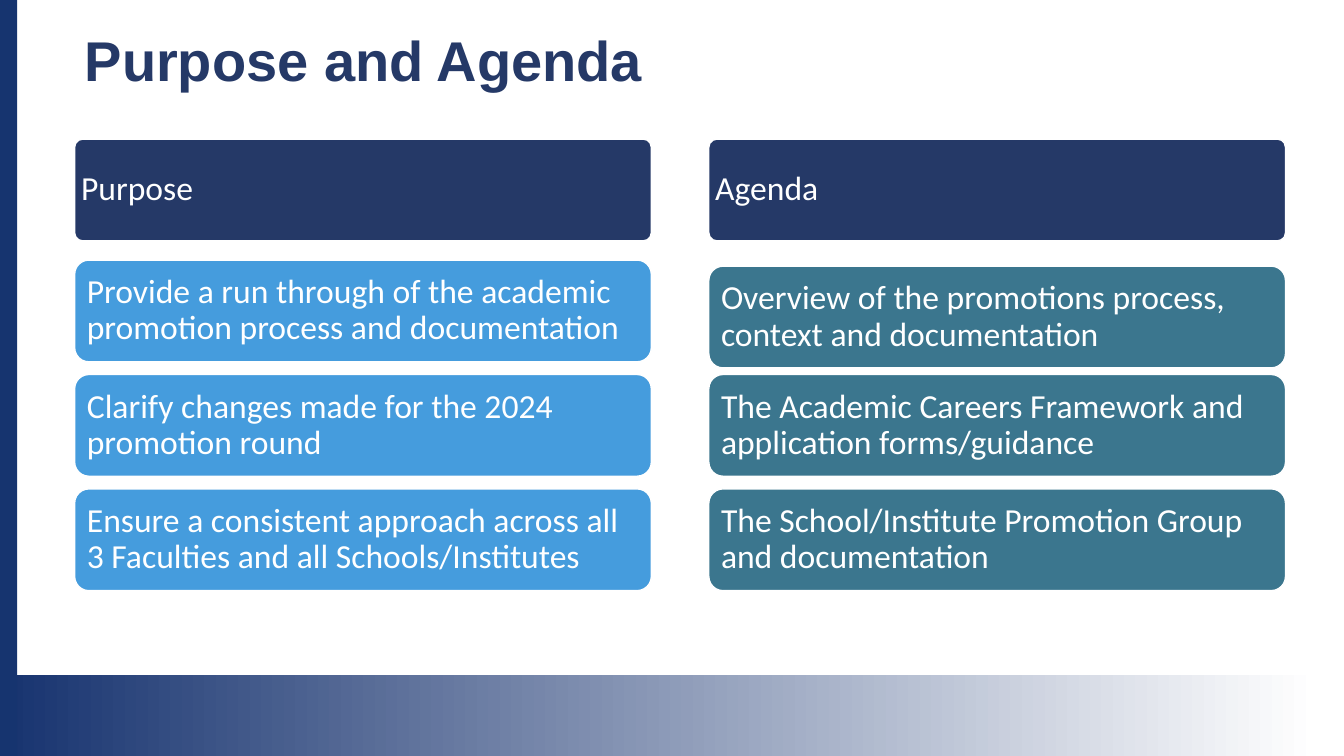
from dataclasses import dataclass

from pptx import Presentation
from pptx import util as u
from pptx.dml.color import RGBColor
from pptx.enum import shapes, text


@dataclass(frozen=True)
class Theme:
    navy: str = "253967"
    band: str = "17336F"
    bar: str = "16346F"
    blue: str = "459CDD"
    teal: str = "3B768E"
    white: str = "FFFFFF"
    head: str = "Arial"
    body: str = "Calibri"
    big: int = 40
    size: int = 24


THEME = Theme()
WIDE, HIGH = 13.33, 7.5

# Grid of two columns: a header row, then three rows of cards
LEFT, STEP, CARD_W, CARD_H = 0.74, 6.29, 5.72, 1.01
HEAD_Y, ROW_Y, PITCH = 1.38, 2.58, 1.135

# Heading, card colour, drop of the first card, card texts
COLUMNS = [
    ("Purpose", THEME.blue, 0, [
        "Provide a run through of the academic promotion process and documentation",
        "Clarify changes made for the 2024 promotion round",
        "Ensure a consistent approach across all 3 Faculties and all Schools/Institutes",
    ]),
    ("Agenda", THEME.teal, 0.06, [
        "Overview of the promotions process, context and documentation",
        "The Academic Careers Framework and application forms/guidance",
        "The School/Institute Promotion Group and documentation",
    ]),
]


def rgb(code):
    return RGBColor.from_string(code)


def block(slide, kind, x, y, w, h, fill):
    shape = slide.shapes.add_shape(kind, *map(u.Inches, (x, y, w, h)))
    shape.shadow.inherit = False
    shape.fill.solid()
    shape.fill.fore_color.rgb = rgb(fill)
    shape.line.fill.background()
    return shape


def write(shape, words, font, size, color, anchor):
    frame = shape.text_frame
    frame.text = words
    frame.word_wrap = True
    frame.auto_size = text.MSO_AUTO_SIZE.NONE
    frame.vertical_anchor = anchor
    para = frame.paragraphs[0]
    para.alignment = text.PP_ALIGN.LEFT
    para.line_spacing = 0.9
    para.font.name = font
    para.font.size = u.Pt(size)
    para.font.color.rgb = rgb(color)
    return para


def card(slide, words, x, y, fill, round_by, pad):
    shape = block(slide, shapes.MSO_SHAPE.ROUNDED_RECTANGLE,
                  x, y, CARD_W, CARD_H, fill)
    shape.adjustments[0] = round_by
    shape.line.color.rgb = rgb(THEME.white)
    shape.line.width = u.Pt(1)
    frame = shape.text_frame
    frame.margin_left = frame.margin_right = u.Inches(pad)
    frame.margin_top = frame.margin_bottom = u.Inches(pad)
    write(shape, words, THEME.body, THEME.size, THEME.white,
          text.MSO_ANCHOR.MIDDLE)


def frame_page(slide):
    # Fading band at the foot, solid bar at the left edge
    rect = shapes.MSO_SHAPE.RECTANGLE
    band = block(slide, rect, 0, 6.7, WIDE, HIGH - 6.7, THEME.band)
    band.fill.gradient()
    band.fill.gradient_angle = 0
    stops = zip(band.fill.gradient_stops, (THEME.band, THEME.white), (0, 0.98))
    for stop, color, place in stops:
        stop.color.rgb = rgb(color)
        stop.position = place
    block(slide, rect, 0, 0, 0.17, HIGH, THEME.bar)


def title(slide, words):
    shape = slide.shapes.title
    shape.left, shape.top = u.Inches(LEFT), u.Inches(0.28)
    shape.width, shape.height = u.Inches(10.43), u.Inches(0.96)
    para = write(shape, words, THEME.head, THEME.big, THEME.navy,
                 text.MSO_ANCHOR.TOP)
    para.font.bold = True


def column(slide, x, head, fill, drop, items):
    card(slide, head, x, HEAD_Y, THEME.navy, 0.08, 0.04)
    for row, words in enumerate(items):
        y = ROW_Y + row * PITCH + (drop if row == 0 else 0)
        card(slide, words, x, y, fill, 0.14, 0.08)


def main():
    deck = Presentation()
    deck.slide_width, deck.slide_height = u.Inches(WIDE), u.Inches(HIGH)
    slide = deck.slides.add_slide(deck.slide_layouts.get_by_name("Title Only"))
    frame_page(slide)
    title(slide, "Purpose and Agenda")
    for col, parts in enumerate(COLUMNS):
        column(slide, LEFT + col * STEP, *parts)
    deck.save("out.pptx")


if __name__ == "__main__":
    main()
